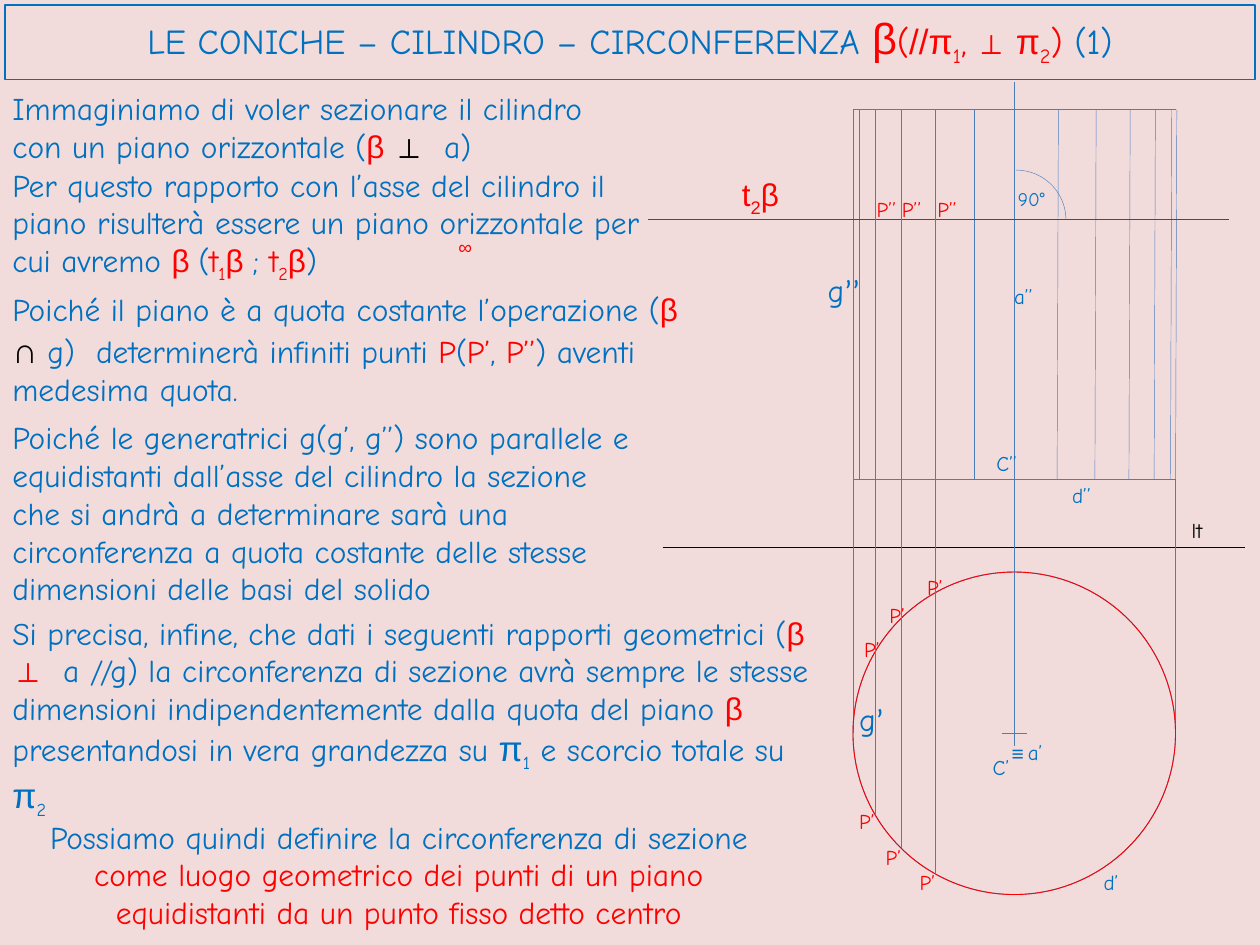
from dataclasses import dataclass

from pptx import Presentation
from pptx import util as u
from pptx.dml.color import RGBColor
from pptx.enum import shapes, text
from pptx.oxml.ns import qn
from lxml import etree

BLUE = RGBColor(0x00, 0x70, 0xC0)
STEEL = RGBColor(0x4B, 0x7E, 0xBC)
BASE_BLUE = RGBColor(0x4F, 0x81, 0xBD)
RED = RGBColor(0xFF, 0x00, 0x00)
BLACK = RGBColor(0x00, 0x00, 0x00)
PINK = RGBColor(0xF2, 0xDC, 0xDB)
COMIC, ARIAL, CALIBRI = "Comic Neue", "Arial", "Calibri"

AXIS_X, CENTER_Y, DIAMETER = 8.05, 5.82, 2.56
LEFT_X, RIGHT_X = 6.77, 9.33
TOP_Y, BASE_Y, PLANE_Y, GROUND_Y = 0.87, 3.8, 1.74, 4.34


@dataclass(frozen=True)
class Run:
    text: str
    color: RGBColor = BLUE
    font: str = COMIC
    size: float = 18
    bold: bool = False
    subscript: bool = False


@dataclass(frozen=True)
class TextBlock:
    left: float
    top: float
    width: float
    height: float
    runs: tuple[Run, ...]
    anchor: text.MSO_ANCHOR = text.MSO_ANCHOR.TOP
    align: text.PP_ALIGN = text.PP_ALIGN.LEFT
    space_before: float = 0
    wrap: bool = True


def write_runs(paragraph, runs: tuple[Run, ...]) -> None:
    for item in runs:
        run = paragraph.add_run()
        run.text = item.text
        run.font.name = item.font
        run.font.size = u.Pt(item.size)
        run.font.bold = item.bold
        run.font.color.rgb = item.color
        if item.subscript:
            run._r.get_or_add_rPr().set("baseline", "-25000")


def draw_text(slide, block: TextBlock) -> None:
    box = slide.shapes.add_textbox(u.Inches(block.left), u.Inches(block.top),
                                   u.Inches(block.width), u.Inches(block.height))
    frame = box.text_frame
    frame.word_wrap = block.wrap
    frame.auto_size = text.MSO_AUTO_SIZE.SHAPE_TO_FIT_TEXT
    frame.vertical_anchor = block.anchor
    paragraph = frame.paragraphs[0]
    paragraph.alignment = block.align
    if block.space_before:
        paragraph.space_before = u.Pt(block.space_before)
    write_runs(paragraph, block.runs)


def label(name: str, left: float, top: float, color: RGBColor = BLUE,
          width: float = 0.39, font: str = COMIC, size: float = 12) -> TextBlock:
    return TextBlock(left, top, width, 0.3, (Run(name, color, font, size),))


def draw_line(slide, x1: float, y1: float, x2: float, y2: float,
              color: RGBColor = STEEL) -> None:
    line = slide.shapes.add_connector(shapes.MSO_CONNECTOR.STRAIGHT, u.Inches(x1),
                                      u.Inches(y1), u.Inches(x2), u.Inches(y2))
    line.line.color.rgb = color
    line.line.width = u.Pt(0.25)
    etree.SubElement(line._element.spPr, qn("a:effectLst"))


def draw_outline(slide, kind, left: float, top: float, size: float,
                 color: RGBColor, weight: float) -> None:
    shape = slide.shapes.add_shape(kind, u.Inches(left), u.Inches(top),
                                   u.Inches(size), u.Inches(size))
    shape.shadow.inherit = False
    shape.fill.background()
    shape.line.color.rgb = color
    shape.line.width = u.Pt(weight)


BETA = Run("β ", RED, ARIAL)
SUB_1, SUB_2 = Run("1", RED, subscript=True), Run("2", RED, subscript=True)
MIDDLE = text.MSO_ANCHOR.MIDDLE

TITLE = (
    Run("LE CONICHE – CILINDRO – CIRCONFERENZA ", size=20),
    Run("β", RED, ARIAL, 24.8), Run("(", RED, size=20), Run("//π", RED, ARIAL, 20),
    Run("1", RED, size=20, subscript=True), Run(",", RED, size=20),
    Run(" ⊥ ", RED, ARIAL, 18, True), Run("π", RED, ARIAL, 20),
    Run("2", RED, size=20, subscript=True), Run(")", RED, size=20), Run(" (1)", size=20),
)

EXPLANATION = (
    TextBlock(0, 0.66, 5.18, 0.71, (
        Run("Immaginiamo di voler sezionare il cilindro con un piano orizzontale ("),
        BETA, Run("⊥ ", BLACK, ARIAL, bold=True), Run(" a)"))),
    TextBlock(0, 1.28, 5.2, 1.01, (
        Run("Per questo rapporto con l’asse del cilindro il piano risulterà essere "
            "un piano orizzontale per cui avremo "),
        BETA, Run("("), Run("t", RED), SUB_1, BETA, Run("; "), Run("t", RED), SUB_2,
        Run("β", RED, ARIAL), Run(")")), MIDDLE),
    TextBlock(3.54, 1.81, 0.33, 0.29, (Run("∞", RED, ARIAL, 11),), MIDDLE, wrap=False),
    TextBlock(0, 2.25, 5.51, 1.04, (
        Run("Poiché il piano è a quota costante l’operazione ("), BETA,
        Run("∩ ", BLACK, ARIAL, 20, True), Run("g)  determinerà infiniti punti "),
        Run("P", RED), Run("("), Run("P’", RED), Run(", "), Run("P’’", RED),
        Run(") aventi medesima quota.")), MIDDLE, space_before=3.6),
    TextBlock(0, 3.27, 5.2, 1.62, (
        Run("Poiché le generatrici g(g’, g’’) sono parallele e equidistanti dall’asse "
            "del cilindro la sezione che si andrà a determinare sarà una circonferenza "
            "a quota costante delle stesse dimensioni delle basi del solido"),)),
    TextBlock(0, 4.82, 6.53, 1.65, (
        Run("Si precisa, infine, che dati i seguenti rapporti geometrici ("), BETA,
        Run("⊥ ", RED, ARIAL, bold=True),
        Run(" a //g) la circonferenza di sezione avrà sempre le stesse dimensioni "
            "indipendentemente dalla quota del piano "),
        BETA, Run("presentandosi in vera grandezza su "), Run("π", font=ARIAL, size=20),
        Run("1", subscript=True), Run(" e scorcio totale su  "),
        Run("π", font=ARIAL, size=20), Run("2", subscript=True))),
    TextBlock(0.04, 6.44, 6.25, 1.01, (
        Run("Possiamo quindi definire la circonferenza di sezione "),
        Run("come luogo geometrico dei punti di un piano equidistanti da un punto "
            "fisso detto centro", RED)), align=text.PP_ALIGN.CENTER),
)

POINTS_PLAN = ((6.93, 6.65), (6.72, 6.37), (7.2, 6.85), (6.96, 4.73), (7.26, 4.51), (6.76, 5))
POINTS_FRONT_X = (6.86, 7.06, 7.34)

LABELS = (
    label("C’’", 7.81, 3.53, width=0.52), label("C’", 7.78, 5.94),
    label("lt", 9.36, 4.06, BLACK), label("d’’", 8.41, 3.78), label("d’", 8.66, 6.85),
    label("a’’", 7.95, 2.2), label("a’", 8.06, 5.82),
    label("≡", 7.93, 5.83, font=ARIAL), label("90°", 7.98, 1.44, width=0.53, size=11),
    *(label("P’", x, y, RED) for x, y in POINTS_PLAN),
    *(label("P’’", x, 1.51, RED, 0.45) for x in POINTS_FRONT_X),
    TextBlock(5.79, 1.34, 0.55, 0.4, (
        Run("t", RED, ARIAL), Run("2", RED, ARIAL, subscript=True), Run("β", RED, ARIAL))),
    TextBlock(6.47, 2.1, 0.47, 0.42, (Run("g"), Run("’’", font=CALIBRI))),
    TextBlock(6.72, 5.51, 0.44, 0.4, (Run("g"), Run("’", font=CALIBRI))),
)

GENERATRICES_LEFT = (LEFT_X, 6.82, 6.95, 7.15, 7.42, 7.73)
GENERATRICES_RIGHT = (8.39, 8.69, 8.96, 9.16, 9.29, RIGHT_X)
SECTION_PROJECTIONS = ((6.95, 6.47), (7.15, 6.73), (7.42, 6.94))


def draw_cylinder(slide) -> None:
    """Front view above the ground line, plan view below it."""
    top = CENTER_Y - DIAMETER / 2
    draw_line(slide, 5.26, GROUND_Y, 9.88, GROUND_Y, BLACK)
    draw_outline(slide, shapes.MSO_SHAPE.OVAL, LEFT_X, top, DIAMETER, BASE_BLUE, 0.5)
    for x in (LEFT_X, RIGHT_X):
        draw_line(slide, x, CENTER_Y, x, BASE_Y)
    for y in (BASE_Y, TOP_Y):
        draw_line(slide, LEFT_X, y, RIGHT_X, y)
    draw_line(slide, AXIS_X, 0.65, AXIS_X, CENTER_Y)
    draw_line(slide, AXIS_X, CENTER_Y - 0.1, AXIS_X, CENTER_Y + 0.1)
    draw_line(slide, AXIS_X - 0.1, CENTER_Y, AXIS_X + 0.1, CENTER_Y)
    for x in GENERATRICES_LEFT:
        draw_line(slide, x, BASE_Y, x, TOP_Y)
    for x in GENERATRICES_RIGHT:
        draw_line(slide, x, BASE_Y, x + 0.01, TOP_Y)


def draw_section(slide) -> None:
    draw_line(slide, 5.14, PLANE_Y, 9.75, PLANE_Y, RED)
    draw_outline(slide, shapes.MSO_SHAPE.OVAL, LEFT_X, CENTER_Y - DIAMETER / 2,
                 DIAMETER, RED, 0.5)
    draw_outline(slide, shapes.MSO_SHAPE.ARC, 7.67, 1.35, 0.79, STEEL, 0.25)
    for x, y in SECTION_PROJECTIONS:
        draw_line(slide, x, y, x, PLANE_Y)


def draw_title(slide) -> None:
    title = slide.shapes.title
    title.left, title.top = u.Inches(0.04), u.Inches(0.04)
    title.width, title.height = u.Inches(9.92), u.Inches(0.59)
    title.line.color.rgb = BLUE
    title.line.width = u.Pt(0.75)
    title.text_frame.auto_size = text.MSO_AUTO_SIZE.NONE
    title.text_frame.vertical_anchor = MIDDLE
    title.text_frame.margin_bottom = u.Inches(0.1)
    paragraph = title.text_frame.paragraphs[0]
    paragraph.alignment = text.PP_ALIGN.CENTER
    write_runs(paragraph, TITLE)


def main() -> None:
    deck = Presentation()
    deck.slide_width, deck.slide_height = u.Inches(10), u.Inches(7.5)
    slide = deck.slides.add_slide(deck.slide_layouts[0])
    slide.background.fill.solid()
    slide.background.fill.fore_color.rgb = PINK
    subtitle = slide.placeholders[1]._element
    subtitle.getparent().remove(subtitle)

    draw_title(slide)
    draw_cylinder(slide)
    draw_section(slide)
    for block in EXPLANATION + LABELS:
        draw_text(slide, block)
    deck.save("out.pptx")


if __name__ == "__main__":
    main()
